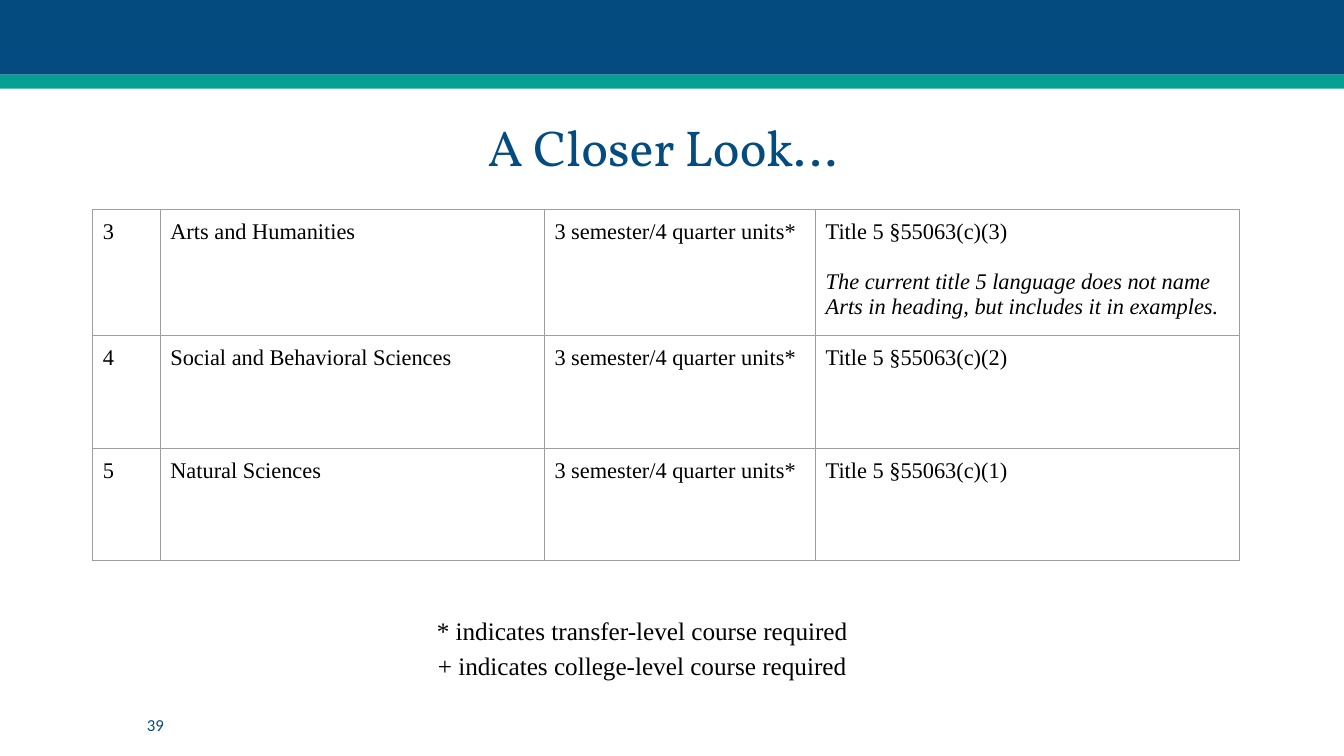
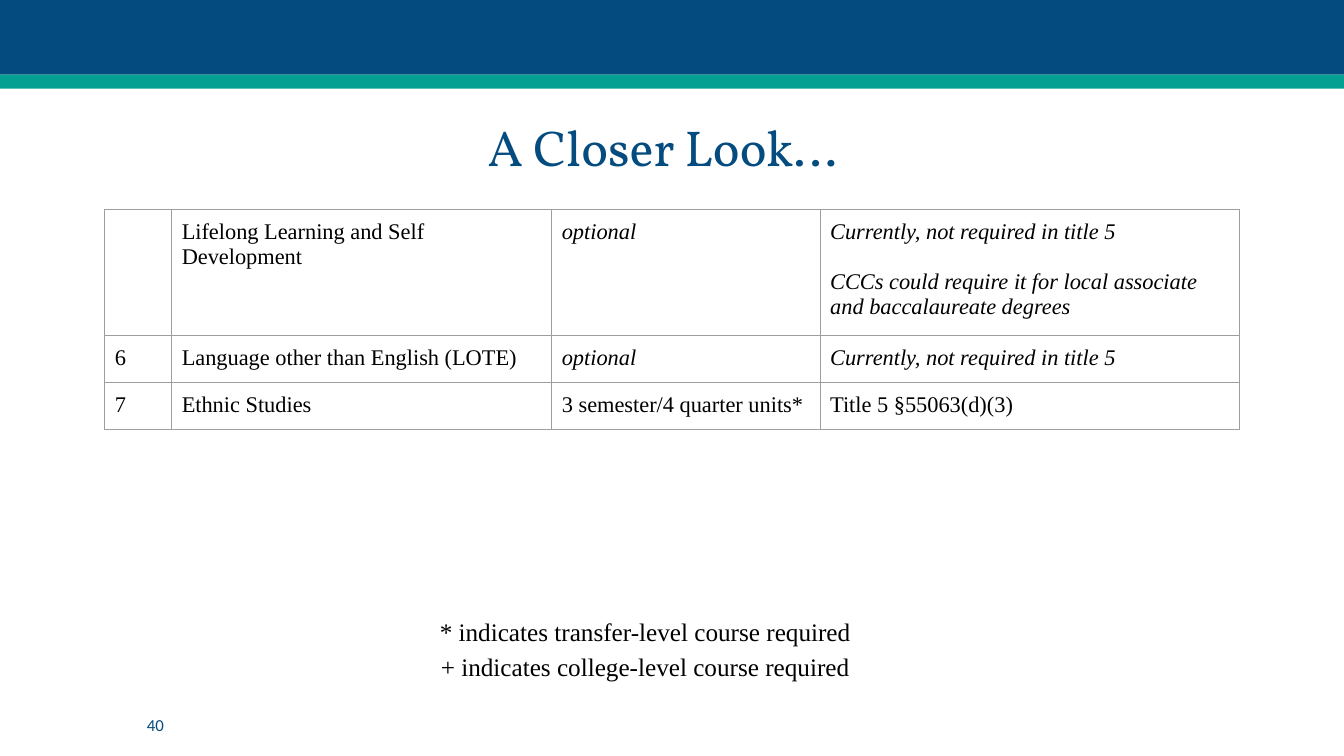
"""Build two slides that compare course areas with title 5."""
from dataclasses import dataclass
from typing import NamedTuple

from lxml.etree import SubElement
from pptx import Presentation
from pptx.dml.color import RGBColor
from pptx.enum.shapes import MSO_SHAPE
from pptx.enum.text import MSO_ANCHOR, PP_ALIGN
from pptx.oxml.ns import qn
from pptx.util import Inches, Pt


@dataclass(frozen=True)
class Theme:
    """Hold the colours, fonts and type sizes of the deck."""
    navy: str = "044C7F"
    teal: str = "04A193"
    ink: str = "000000"
    border: str = "9E9E9E"
    title_font: str = "Vollkorn"
    body_font: str = "Times New Roman"
    number_font: str = "Calibri"
    title_size: float = 36
    note_size: float = 18
    table_size: float = 16
    number_size: float = 12
    table_gap: float = 17.7
    border_width: float = 0.75


class Line(NamedTuple):
    """Describe one paragraph of text."""
    text: str
    italic: bool = False


THEME = Theme()
SLIDE_WIDTH = 13.33
COLUMN_SHARES = (0.67, 3.81, 2.69, 4.2)
UNITS = "3 semester/4 quarter units*"
OPTIONAL = Line("optional", italic=True)
NOT_REQUIRED = Line("Currently, not required in title 5", italic=True)
NOTES = (
    "* indicates transfer-level course required",
    "+ indicates college-level course required",
)
CORE_AREAS = (
    ("3", "Arts and Humanities", UNITS, (
        "Title 5 §55063(c)(3)",
        Line("The current title 5 language does not name Arts in heading, "
             "but includes it in examples.", italic=True))),
    ("4", "Social and Behavioral Sciences", UNITS, "Title 5 §55063(c)(2)"),
    ("5", "Natural Sciences", UNITS, "Title 5 §55063(c)(1)"),
)
OTHER_AREAS = (
    ("", "Lifelong Learning and Self Development", OPTIONAL, (
        NOT_REQUIRED,
        Line("CCCs could require it for local associate and baccalaureate degrees",
             italic=True))),
    ("6", "Language other than English (LOTE)", OPTIONAL, NOT_REQUIRED),
    ("7", "Ethnic Studies", UNITS, "Title 5 §55063(d)(3)"),
)


def as_lines(content):
    """Turn a string, a line or a tuple of them into a list of lines."""
    items = [content] if isinstance(content, (str, Line)) else content
    return [Line(item) if isinstance(item, str) else item for item in items]


def write_text(frame, content, *, font, size, color, align=PP_ALIGN.LEFT,
               spacing=1.0, gap=0):
    """Write paragraphs into a text frame with one format."""
    for index, line in enumerate(as_lines(content)):
        para = frame.add_paragraph() if index else frame.paragraphs[0]
        para.alignment = align
        para.line_spacing = spacing
        para.space_before = Pt(gap if index else 0)
        para.font.size = Pt(size)
        if line.text:
            span = para.add_run()
            span.text = line.text
            span.font.name = font
            span.font.size = Pt(size)
            span.font.italic = line.italic
            span.font.color.rgb = RGBColor.from_string(color)


def add_text(page, content, place, *, anchor=MSO_ANCHOR.MIDDLE,
             margin_y=0.05, margin_right=0.1, **style):
    """Add a wrapping text box."""
    frame = page.shapes.add_textbox(*map(Inches, place)).text_frame
    frame.word_wrap = True
    frame.vertical_anchor = anchor
    frame.margin_left, frame.margin_right = Inches(0.1), Inches(margin_right)
    frame.margin_top = frame.margin_bottom = Inches(margin_y)
    write_text(frame, content, **style)


def add_band(page, top, height, color):
    """Add a plain band across the whole slide."""
    band = page.shapes.add_shape(MSO_SHAPE.RECTANGLE, 0, Inches(top),
                                 Inches(SLIDE_WIDTH), Inches(height))
    band.shadow.inherit = False
    band.fill.solid()
    band.fill.fore_color.rgb = RGBColor.from_string(color)
    band.line.fill.background()


def add_borders(cell):
    """Draw a thin line on each side of a table cell."""
    properties = cell._tc.get_or_add_tcPr()
    for side in ("lnL", "lnR", "lnT", "lnB"):
        edge = SubElement(properties, qn(f"a:{side}"), w=str(Pt(THEME.border_width)))
        fill = SubElement(edge, qn("a:solidFill"))
        SubElement(fill, qn("a:srgbClr"), val=THEME.border)


def add_area_table(page, rows, left, width, heights):
    """Add a bordered table of course areas."""
    table = page.shapes.add_table(
        len(rows), len(COLUMN_SHARES), Inches(left), Inches(2.08),
        Inches(width), Inches(sum(heights))).table
    table.first_row = table.horz_banding = False
    for column, share in zip(table.columns, COLUMN_SHARES):
        column.width = Inches(width * share / sum(COLUMN_SHARES))
    for row, height, contents in zip(table.rows, heights, rows):
        row.height = Inches(height)
        for cell, content in zip(row.cells, contents):
            cell.margin_left = cell.margin_right = Inches(0.1)
            cell.margin_top = cell.margin_bottom = Inches(0.1)
            add_borders(cell)
            cell.fill.background()
            write_text(cell.text_frame, content, font=THEME.body_font,
                       size=THEME.table_size, color=THEME.ink, gap=THEME.table_gap)


def add_page(deck, number):
    """Add a slide with the shared bands, title and slide number."""
    page = deck.slides.add_slide(deck.slide_layouts[6])
    add_band(page, 0, 0.74, THEME.navy)
    add_band(page, 0.74, 0.14, THEME.teal)
    add_text(page, "A Closer Look…", (0.92, 1.11, 11.5, 0.77), margin_right=0.3,
             font=THEME.title_font, size=THEME.title_size, color=THEME.navy,
             align=PP_ALIGN.CENTER, spacing=0.9)
    add_text(page, str(number), (1.36, 7.07, 0.9, 0.25), font=THEME.number_font,
             size=THEME.number_size, color=THEME.navy)
    return page


def add_notes_key(page, left, top):
    """Add the key to the symbols in the table."""
    add_text(page, NOTES, (left, top, 6.18, 0.85), anchor=MSO_ANCHOR.TOP,
             margin_y=0.1, font=THEME.body_font, size=THEME.note_size,
             color=THEME.ink, align=PP_ALIGN.CENTER, spacing=1.15)


def main():
    """Build and save the deck."""
    deck = Presentation()
    deck.slide_width, deck.slide_height = Inches(SLIDE_WIDTH), Inches(7.5)

    page = add_page(deck, 39)
    add_area_table(page, CORE_AREAS, 0.92, 11.37, (1.18, 1.12, 1.12))
    add_notes_key(page, 3.28, 5.96)

    page = add_page(deck, 40)
    add_area_table(page, OTHER_AREAS, 1.04, 11.25, (1.18, 0.45, 0.45))
    add_notes_key(page, 3.31, 5.97)

    deck.save("out.pptx")


if __name__ == "__main__":
    main()
